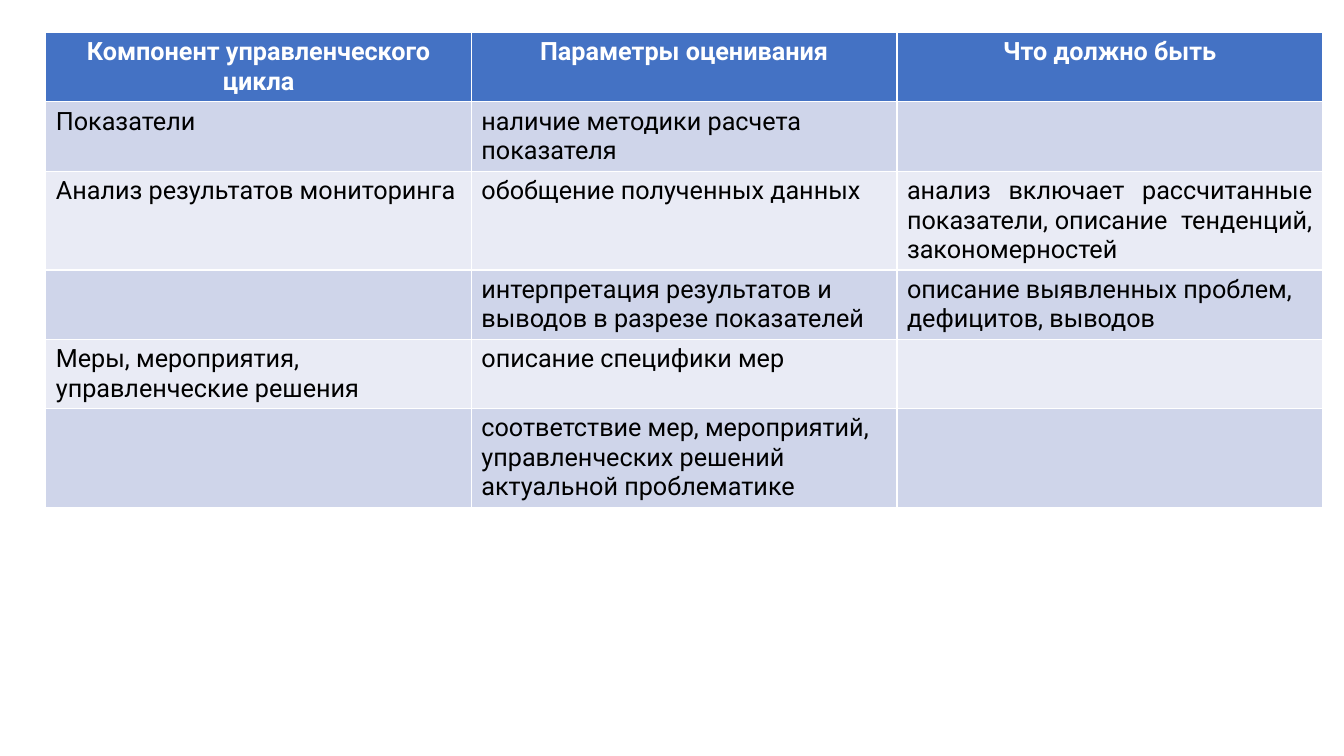
"""Build a slide with a table of management cycle components and their assessment."""
from pptx import Presentation
from pptx.dml.color import RGBColor
from pptx.enum.text import PP_ALIGN
from pptx.util import Pt

LEFT, CENTER, JUSTIFY = PP_ALIGN.LEFT, PP_ALIGN.CENTER, PP_ALIGN.JUSTIFY
WHITE = RGBColor(0xFF, 0xFF, 0xFF)
BLACK = RGBColor(0x00, 0x00, 0x00)
HEADER_BLUE = RGBColor(0x44, 0x72, 0xC4)
BAND_DARK = RGBColor(0xCF, 0xD5, 0xEA)
BAND_LIGHT = RGBColor(0xE9, 0xEB, 0xF5)

CYCLE_ROWS = [
    ("Компонент управленческого цикла", "Параметры оценивания", "Что должно быть"),
    ("Показатели", "наличие методики расчета показателя", ""),
    ("Анализ результатов мониторинга", "обобщение полученных данных",
     "анализ включает рассчитанные показатели, описание  тенденций, закономерностей"),
    ("", "интерпретация результатов и выводов в разрезе показателей",
     "описание выявленных проблем, дефицитов, выводов"),
    ("Меры, мероприятия, управленческие решения", "описание специфики мер", ""),
    ("", "соответствие мер, мероприятий, управленческих решений актуальной проблематике", ""),
]
JUSTIFIED_CELL = (2, 2)
COLUMN_WIDTH = 304
ROW_HEIGHT = 29.5
TABLE_HEIGHT = 324.7

presentation = Presentation()
presentation.slide_width, presentation.slide_height = Pt(960), Pt(540)
slide = presentation.slides.add_slide(presentation.slide_layouts[6])

column_count = len(CYCLE_ROWS[0])
frame = slide.shapes.add_table(len(CYCLE_ROWS), column_count, Pt(32.7), Pt(23.3),
                               Pt(COLUMN_WIDTH * column_count), Pt(TABLE_HEIGHT))
cycle_table = frame.table
for row in cycle_table.rows:
    row.height = Pt(ROW_HEIGHT)
frame.height = Pt(TABLE_HEIGHT)

for row_index, texts in enumerate(CYCLE_ROWS):
    is_header = row_index == 0
    band = BAND_DARK if row_index % 2 else BAND_LIGHT
    font_format = {"name": "Roboto", "size": Pt(18), "bold": is_header}
    for column_index, text in enumerate(texts):
        cell = cycle_table.cell(row_index, column_index)
        cell.fill.solid()
        cell.fill.fore_color.rgb = HEADER_BLUE if is_header else band
        cell.text = text
        paragraph = cell.text_frame.paragraphs[0]
        paragraph.alignment = CENTER if is_header else LEFT
        for run in paragraph.runs:
            for attribute, value in font_format.items():
                setattr(run.font, attribute, value)
            run.font.color.rgb = WHITE if is_header else BLACK

cycle_table.cell(*JUSTIFIED_CELL).text_frame.paragraphs[0].alignment = JUSTIFY

presentation.save("out.pptx")
